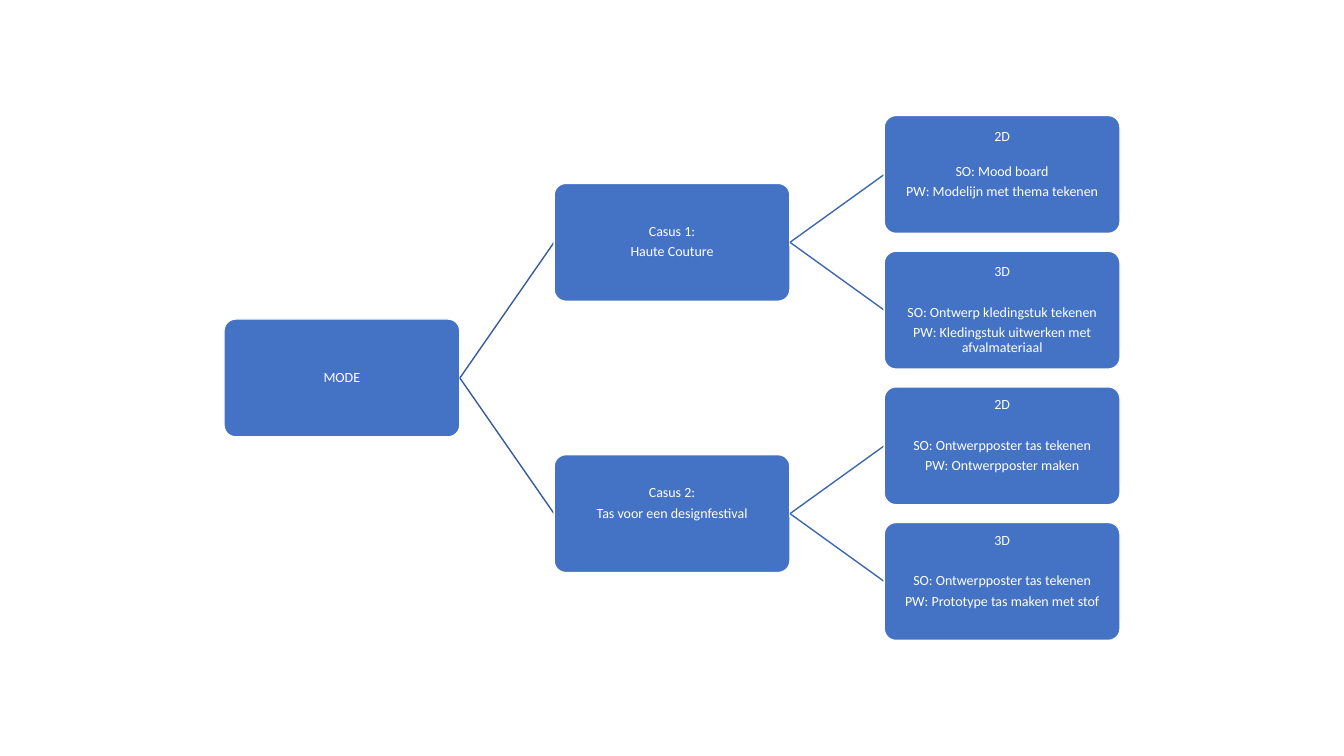
"""Draw a horizontal tree of the fashion theme, its two cases and their assignments."""
from dataclasses import dataclass

from lxml.etree import SubElement
from pptx import Presentation
from pptx.dml.color import RGBColor
from pptx.enum.shapes import MSO_CONNECTOR as Connector, MSO_SHAPE as Shape
from pptx.enum.text import MSO_ANCHOR as Anchor, PP_ALIGN as Align
from pptx.oxml.ns import qn
from pptx.util import Pt

BLUE = RGBColor(0x44, 0x72, 0xC4)
WHITE = RGBColor(0xFF, 0xFF, 0xFF)
BRANCH_COLOURS = [RGBColor(0x36, 0x5B, 0x9D), RGBColor(0x3E, 0x67, 0xB2)]
BOX_WIDTH, BOX_HEIGHT = 168.5, 84.25
COLUMN_LEFT, COLUMN_STEP = 160, 235.8
ROW_STEP, MIDDLE = 96.9, 270
INSET, LINE_GAP = 3.4, 3.5


@dataclass
class Topic:
    lines: list
    row: float
    heading_gap: float = 0
    space_below: float = 0
    children: tuple = ()


class TreeSlide:
    font = "Calibri"
    size = Pt(10)

    def __init__(self, slide):
        self.shapes = slide.shapes

    def box(self, topic, left, centre):
        box = self.shapes.add_shape(Shape.ROUNDED_RECTANGLE, Pt(left), Pt(centre - BOX_HEIGHT / 2),
                                    Pt(BOX_WIDTH), Pt(BOX_HEIGHT))
        box.adjustments[0] = 0.1
        box.shadow.inherit = False
        box.fill.solid()
        box.fill.fore_color.rgb = BLUE
        box.line.color.rgb = WHITE
        box.line.width = Pt(1)
        self.text(box.text_frame, topic)

    def text(self, frame, topic):
        frame.word_wrap = True
        frame.vertical_anchor = Anchor.MIDDLE
        frame.margin_left = frame.margin_right = frame.margin_top = Pt(INSET)
        frame.margin_bottom = Pt(INSET + topic.space_below)
        frame.text = "\n".join(topic.lines)
        for paragraph in frame.paragraphs:
            paragraph.alignment = Align.CENTER
            paragraph.line_spacing = 0.9
            paragraph.space_after = Pt(LINE_GAP)
            font = paragraph.runs[0].font
            font.name, font.size, font.color.rgb = self.font, self.size, WHITE
        frame.paragraphs[0].space_after = Pt(LINE_GAP + topic.heading_gap)

    def branch(self, start, end, colour):
        branch = self.shapes.add_connector(Connector.STRAIGHT, *map(Pt, start + end))
        branch.line.color.rgb = colour
        branch.line.width = Pt(1)
        SubElement(branch._element.spPr, qn("a:effectLst"))

    def tree(self, topic, level=0):
        left = COLUMN_LEFT + level * COLUMN_STEP
        centre = MIDDLE + topic.row * ROW_STEP
        self.box(topic, left, centre)
        for child in topic.children:
            child_edge = (left + COLUMN_STEP, MIDDLE + child.row * ROW_STEP)
            self.branch((left + BOX_WIDTH, centre), child_edge, BRANCH_COLOURS[level])
            self.tree(child, level + 1)


def main():
    haute_couture = Topic(["Casus 1:", "Haute Couture"], -1, children=(
        Topic(["2D", "SO: Mood board", "PW: Modelijn met thema tekenen"], -1.5, 11, 14.5),
        Topic(["3D", "SO: Ontwerp kledingstuk tekenen",
               "PW: Kledingstuk uitwerken met afvalmateriaal"], -0.5, 14.5),
    ))
    festival_bag = Topic(["Casus 2:", "Tas voor een designfestival"], 1, space_below=14.5, children=(
        Topic(["2D", "SO: Ontwerpposter tas tekenen", "PW: Ontwerpposter maken"], 0.5, 14.5, 14.5),
        Topic(["3D", "SO: Ontwerpposter tas tekenen",
               "PW: Prototype tas maken met stof"], 1.5, 14.5, 14.5),
    ))
    fashion = Topic(["MODE"], 0, children=(haute_couture, festival_bag))

    presentation = Presentation()
    presentation.slide_width, presentation.slide_height = Pt(960), Pt(540)
    blank_layout = presentation.slide_layouts[6]
    TreeSlide(presentation.slides.add_slide(blank_layout)).tree(fashion)
    presentation.save("out.pptx")


if __name__ == "__main__":
    main()
